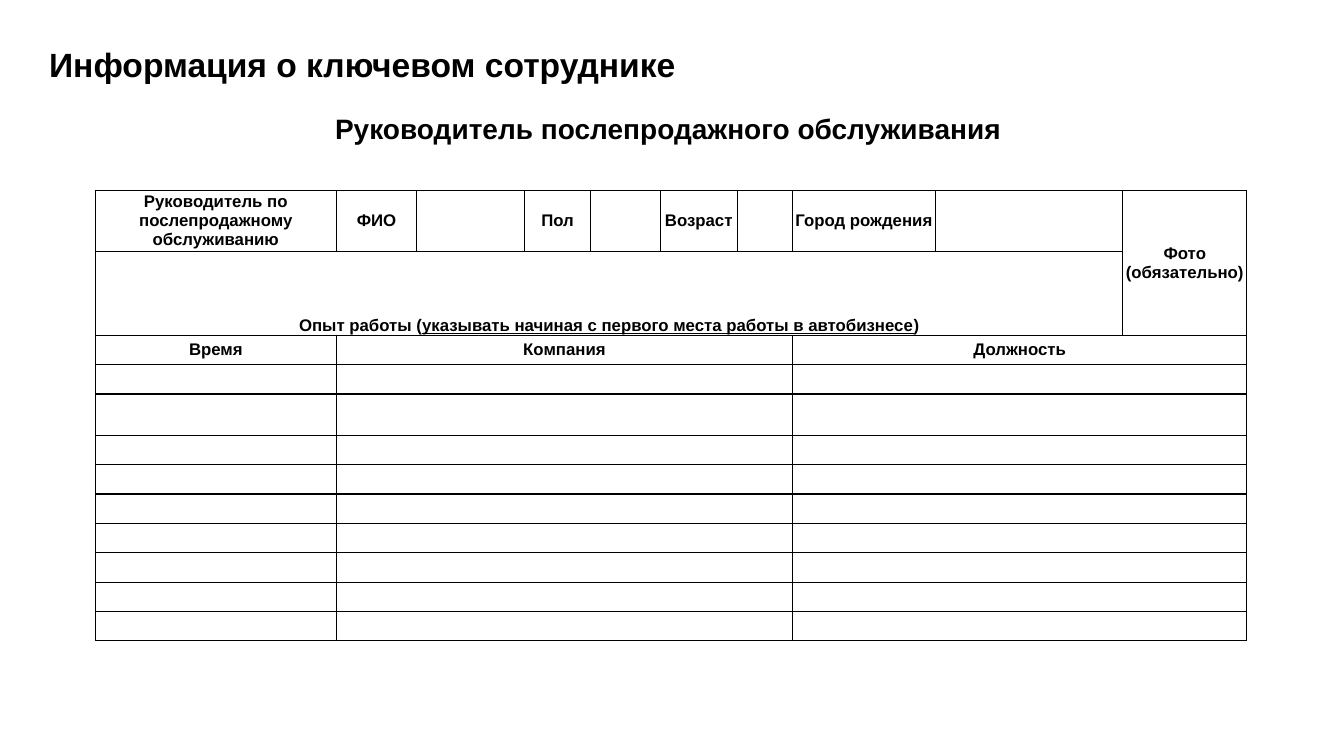
"""Build the key employee form for the head of after-sales service."""
from lxml.etree import SubElement
from pptx import Presentation
from pptx.dml.color import RGBColor
from pptx.enum.text import MSO_ANCHOR, PP_ALIGN
from pptx.oxml.ns import qn
from pptx.util import Pt

TITLE = "Информация о ключевом сотруднике"
SUBTITLE = "Руководитель послепродажного обслуживания "
PERSON = ["Руководитель по послепродажному обслуживанию", "ФИО", "", "Пол", "",
          "Возраст", "", "Город рождения", "", "Фото\n(обязательно)"]
EXPERIENCE = ["Опыт работы (", "указывать начиная с первого места работы в автобизнесе", ")"]
HISTORY = {0: "Время", 1: "Компания", 7: "Должность"}

COLUMN_WIDTHS = [172, 57.6, 77, 47, 49.8, 55.2, 39.5, 101.8, 134, 88.6]
ROW_HEIGHTS = [43.5, 60, 21, 21, 29.5] + [21] * 7
EXPERIENCE_ROW, HISTORY_ROW = 1, 2
BLACK = "000000"


def color(value):
    return RGBColor.from_string(value)


def write(frame, text, size=12, align=PP_ALIGN.CENTER, anchor=MSO_ANCHOR.MIDDLE, underlined=()):
    frame.word_wrap = True
    frame.vertical_anchor = anchor
    lines = [text] if isinstance(text, list) else [[line] for line in text.split("\n")]
    for number, pieces in enumerate(lines):
        paragraph = frame.add_paragraph() if number else frame.paragraphs[0]
        paragraph.alignment = align
        paragraph.font.size = Pt(size)
        for index, piece in enumerate(pieces):
            if not piece:
                continue
            run = paragraph.add_run()
            run.text = piece
            run.font.name = "Arial"
            run.font.size = Pt(size)
            run.font.bold = True
            run.font.underline = index in underlined
            run.font.color.rgb = color(BLACK)


def add_text(slide, text, left, top, width, height, **text_format):
    box = slide.shapes.add_textbox(Pt(left), Pt(top), Pt(width), Pt(height))
    write(box.text_frame, text, **text_format)


def style_cell(cell):
    cell.margin_left = cell.margin_right = cell.margin_top = cell.margin_bottom = 0
    properties = cell._tc.get_or_add_tcPr()
    for side in ("a:lnL", "a:lnR", "a:lnT", "a:lnB"):
        line = SubElement(properties, qn(side), w=str(Pt(1)))
        fill = SubElement(line, qn("a:solidFill"))
        SubElement(fill, qn("a:srgbClr"), val=BLACK)
    cell.fill.background()


def add_form(slide, left, top):
    rows, columns = len(ROW_HEIGHTS), len(COLUMN_WIDTHS)
    table = slide.shapes.add_table(rows, columns, Pt(left), Pt(top),
                                   Pt(sum(COLUMN_WIDTHS)), Pt(sum(ROW_HEIGHTS))).table
    table.first_row = table.horz_banding = False
    for column, width in zip(table.columns, COLUMN_WIDTHS):
        column.width = Pt(width)
    for row, height in zip(table.rows, ROW_HEIGHTS):
        row.height = Pt(height)

    texts = {(0, column): text for column, text in enumerate(PERSON)}
    texts |= {(HISTORY_ROW, column): text for column, text in HISTORY.items()}
    for row in range(rows):
        for column in range(columns):
            cell = table.cell(row, column)
            style_cell(cell)
            if (row, column) == (EXPERIENCE_ROW, 0):
                write(cell.text_frame, EXPERIENCE, underlined=(1,))
                cell.vertical_anchor = MSO_ANCHOR.BOTTOM
            else:
                write(cell.text_frame, texts.get((row, column), ""))
                cell.vertical_anchor = MSO_ANCHOR.MIDDLE

    last = columns - 1
    table.cell(0, last).merge(table.cell(EXPERIENCE_ROW, last))
    table.cell(EXPERIENCE_ROW, 0).merge(table.cell(EXPERIENCE_ROW, last - 1))
    for row in range(HISTORY_ROW, rows):
        table.cell(row, 1).merge(table.cell(row, 6))
        table.cell(row, 7).merge(table.cell(row, last))


def main():
    presentation = Presentation()
    presentation.slide_width, presentation.slide_height = Pt(960), Pt(540)
    slide = presentation.slides.add_slide(presentation.slide_layouts[6])
    add_text(slide, TITLE, 28, 28, 828, 57, size=24, align=PP_ALIGN.LEFT, anchor=MSO_ANCHOR.TOP)
    add_text(slide, SUBTITLE, 35, 75.6, 890, 31.5, size=20)
    add_form(slide, 68.2, 136)
    presentation.save("out.pptx")


if __name__ == "__main__":
    main()
